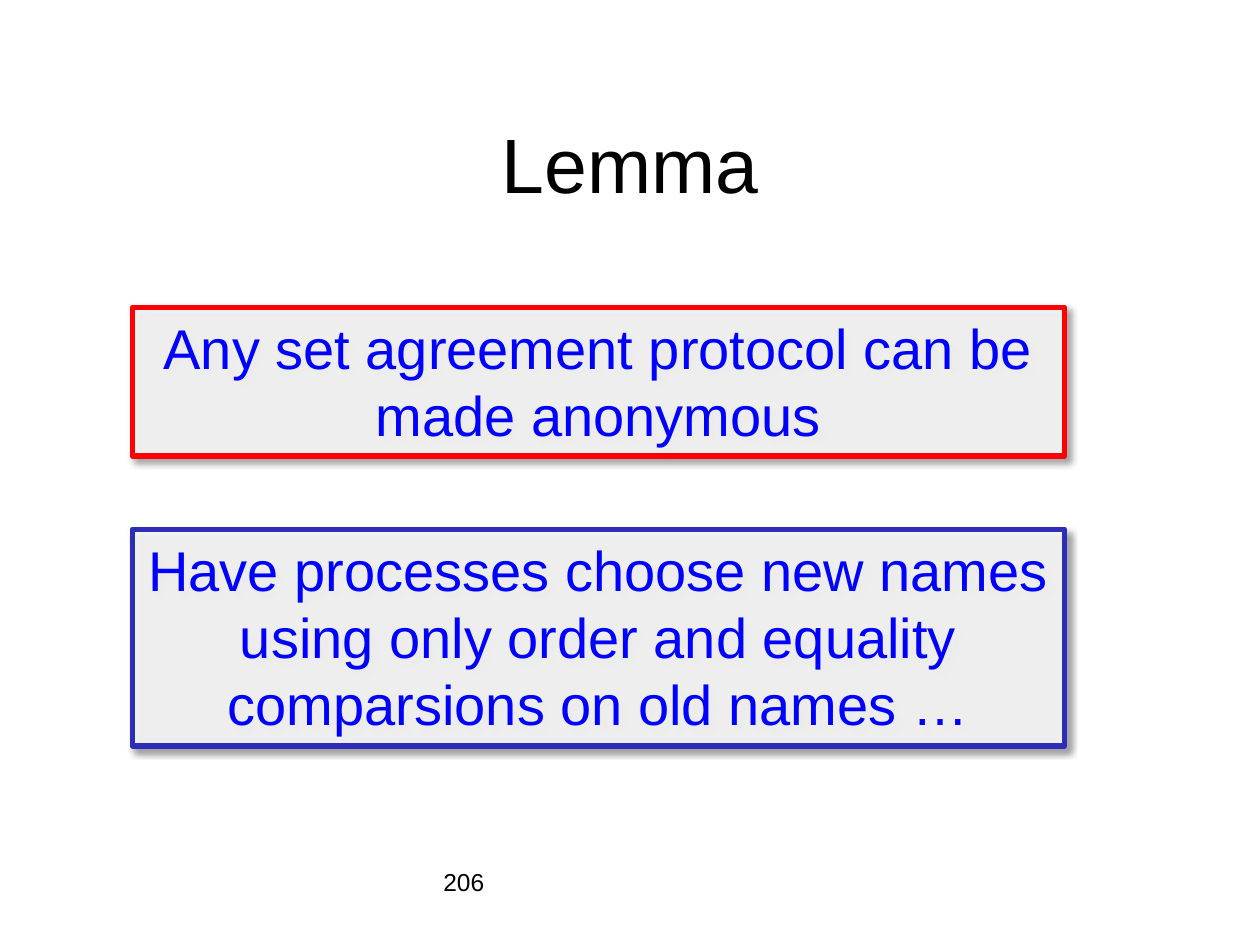
from lxml import etree
from pptx import Presentation
from pptx import util as u
from pptx.dml.color import RGBColor
from pptx.enum import shapes, text
from pptx.oxml.ns import qn


def paint(hue):
    return RGBColor.from_string(hue)


def write(frame, words, size, hue, align):
    frame.word_wrap = True
    para = frame.paragraphs[0]
    para.alignment = align
    run = para.add_run()
    run.text = words
    run.font.name = "Arial"
    run.font.size = u.Pt(size)
    run.font.color.rgb = paint(hue)


def fade(color, share):
    """Set the opacity, in percent, of a colour element."""
    etree.SubElement(color, qn("a:alpha")).set("val", str(share * 1000))


def shade(shape):
    """Give the shape a soft black shadow to the lower right."""
    shape.shadow.inherit = False
    effects = shape._element.spPr.find(qn("a:effectLst"))
    drop = etree.SubElement(effects, qn("a:outerShdw"), {
        "blurRad": str(u.Pt(4)), "dist": str(u.Pt(3)),
        "dir": str(45 * 60000), "algn": "tl", "rotWithShape": "0"})
    color = etree.SubElement(drop, qn("a:srgbClr"), val="000000")
    fade(color, 40)


def add_title(slide, box, words):
    title = slide.shapes.title
    title.left, title.top, title.width, title.height = map(u.Inches, box)
    title.text_frame.vertical_anchor = text.MSO_ANCHOR.MIDDLE
    write(title.text_frame, words, 44, "000000", text.PP_ALIGN.CENTER)


def add_number(slide, box, words):
    label = slide.shapes.add_textbox(*map(u.Inches, box))
    write(label.text_frame, words, 14, "000000", text.PP_ALIGN.LEFT)


def add_claim(slide, box, words, edge):
    """Add a framed statement with a see-through fill."""
    panel = slide.shapes.add_shape(
        shapes.MSO_SHAPE.RECTANGLE, *map(u.Inches, box))
    panel.fill.solid()
    panel.fill.fore_color.rgb = paint("FFFFFF")
    fade(panel._element.spPr.find(qn("a:solidFill"))[0], 80)
    panel.line.color.rgb = paint(edge)
    panel.line.width = u.Pt(3)
    shade(panel)
    frame = panel.text_frame
    frame.vertical_anchor = text.MSO_ANCHOR.TOP
    frame.auto_size = text.MSO_AUTO_SIZE.SHAPE_TO_FIT_TEXT
    write(frame, words, 32, "0000FF", text.PP_ALIGN.CENTER)


def main():
    deck = Presentation()
    deck.slide_width, deck.slide_height = u.Inches(10), u.Inches(7.5)
    slide = deck.slides.add_slide(deck.slide_layouts[5])
    add_title(slide, (0.75, 0.67, 8.5, 1.25), "Lemma")
    add_number(slide, (3.42, 6.83, 3.17, 0.5), "206")
    left, width = 1.05, 7.4
    add_claim(slide, (left, 2.44, width, 1.18),
              "Any set agreement protocol can be made anonymous", "FF0000")
    add_claim(slide, (left, 4.2, width, 1.72),
              "Have processes choose new names using only order and "
              "equality comparsions on old names …", "2D2DB9")
    deck.save("out.pptx")


if __name__ == "__main__":
    main()
